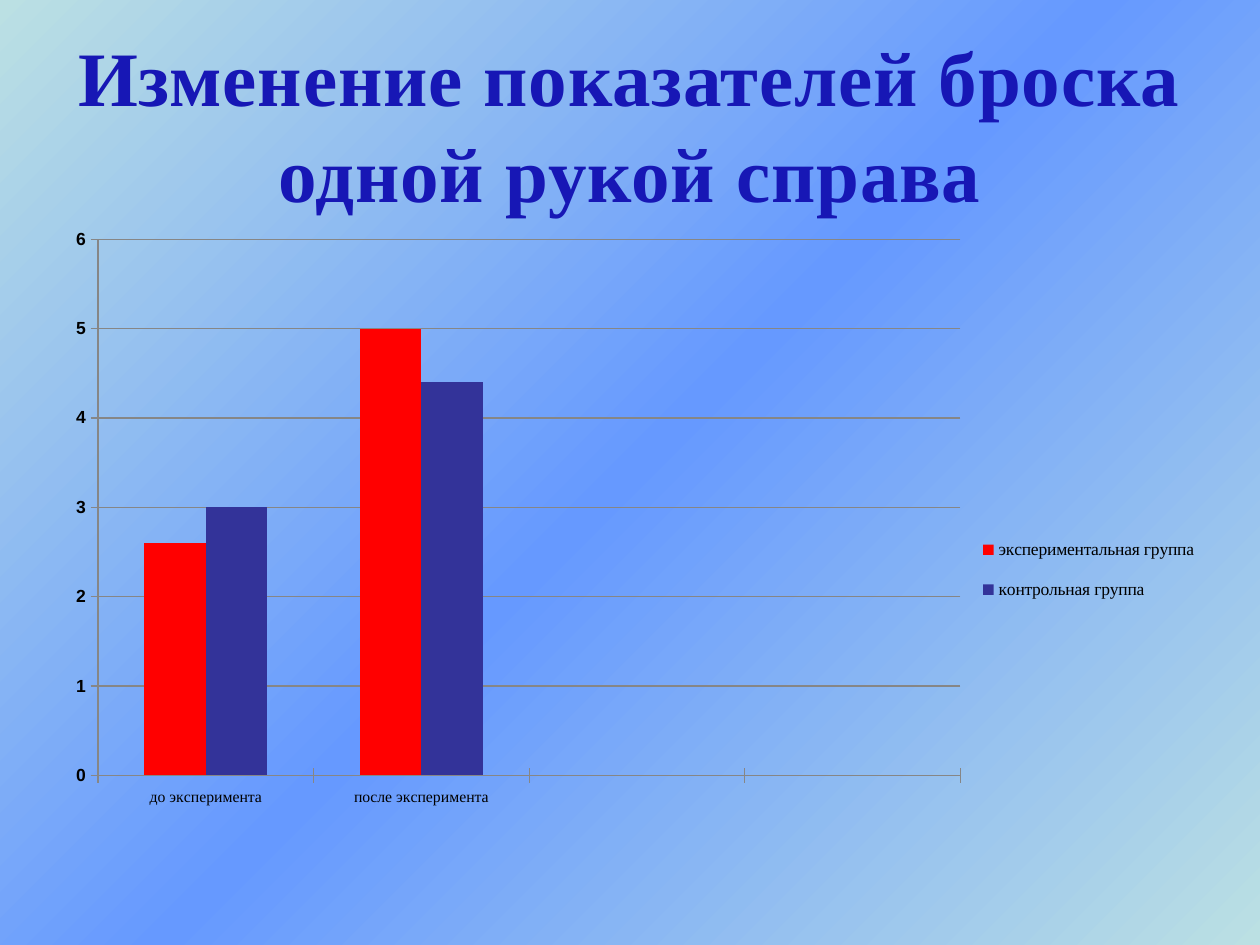
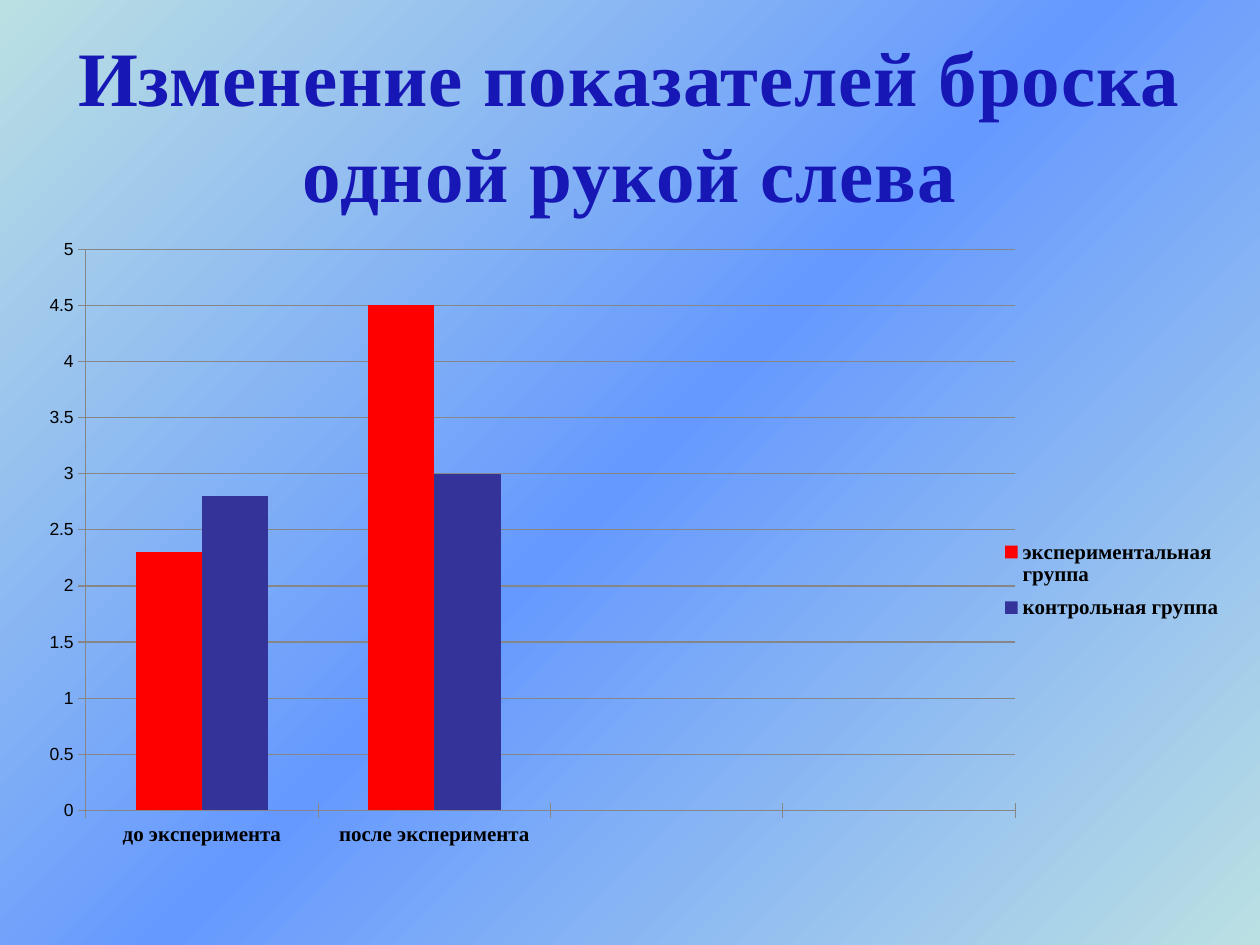
import copy

import lxml.etree
import pptx
import pptx.chart.data
import pptx.dml.color
import pptx.enum.chart
import pptx.enum.text
import pptx.oxml.ns
import pptx.util

Inches = pptx.util.Inches
Pt = pptx.util.Pt
qn = pptx.oxml.ns.qn

COLORS = {
    "pale": "BBE0E3",
    "sky": "6699FF",
    "ink": "1717B5",
    "navy": "0D0D84",
    "black": "000000",
    "grid": "868686",
    "test": "FF0000",
    "control": "333399",
}
SERIF = "Times New Roman"
GROUPS = {"test": "экспериментальная группа", "control": "контрольная группа"}
STAGES = ["до эксперимента", "после эксперимента", "", ""]

CHARTS = [
    {
        "title": "Изменение показателей броска одной рукой справа",
        "box": (0.5, 1.75, 9.25, 4.95),
        "values": {"test": (2.6, 5), "control": (3, 4.4)},
        "top": 6,
        "step": 1,
        "plot": (0.03, 0.03, 0.74, 0.86),
        "key": (0.78, 0.48, 0.2, 0.16),
        "base": {"size": Pt(10), "bold": True},
        "stage": {"size": Pt(9), "bold": False},
        "group": {"size": Pt(10), "bold": False},
    },
    {
        "title": "Изменение показателей броска одной рукой слева",
        "box": (0.25, 1.83, 9.58, 4.95),
        "values": {"test": (2.3, 4.5), "control": (2.8, 3)},
        "top": 5,
        "step": 0.5,
        "plot": (0.045, 0.03, 0.77, 0.9),
        "key": (0.8, 0.48, 0.19, 0.16),
        "base": {"size": Pt(10), "bold": False},
        "stage": {"size": Pt(12), "bold": True},
        "group": {"size": Pt(12), "bold": True},
    },
]


class Deck:
    def __init__(self):
        self.prs = pptx.Presentation()
        self.prs.slide_width = Inches(10)
        self.prs.slide_height = Inches(7.5)
        self.slide = None
        self.backdrop()

    def color(self, name):
        return pptx.dml.color.RGBColor.from_string(COLORS[name])

    def apply(self, target, values):
        for name, value in values.items():
            setattr(target, name, value)

    def place(self, shape, box):
        names = ("left", "top", "width", "height")
        self.apply(shape, dict(zip(names, map(Inches, box))))

    def ramp(self, fill, angle, stops):
        fill.gradient_angle = angle
        for stop, (spot, name) in zip(fill.gradient_stops, stops):
            stop.position = spot
            stop.color.rgb = self.color(name)

    def backdrop(self):
        master = self.prs.slide_master
        fill = master.background.fill
        fill.gradient()
        first = next(master.element.iter(qn("a:gs")))
        first.addnext(copy.deepcopy(first))
        self.ramp(fill, 315, [(0, "pale"), (0.5, "sky"), (1, "pale")])

    def add(self):
        self.slide = self.prs.slides.add_slide(self.prs.slide_layouts[5])

    def title(self, text):
        shape = self.slide.shapes.title
        self.place(shape, (0.5, 0.3, 9, 1.25))
        frame = shape.text_frame
        frame.text = text
        self.apply(frame, {
            "word_wrap": True,
            "auto_size": pptx.enum.text.MSO_AUTO_SIZE.NONE,
            "vertical_anchor": pptx.enum.text.MSO_ANCHOR.MIDDLE,
            "margin_top": Inches(0.13),
        })
        line = frame.paragraphs[0]
        self.apply(line, {
            "alignment": pptx.enum.text.PP_ALIGN.CENTER,
            "line_spacing": 1.04,
        })
        font = line.runs[0].font
        self.apply(font, {"name": SERIF, "size": Pt(44), "bold": True})
        font.fill.gradient()
        self.ramp(font.fill, 270, [(0.25, "ink"), (1, "navy")])
        next(shape.element.iter(qn("a:rPr"))).set("spc", "50")

    def layout(self, node, index, box, inner=False):
        for old in node.findall(qn("c:layout")):
            node.remove(old)
        layout = lxml.etree.Element(qn("c:layout"))
        manual = lxml.etree.SubElement(layout, qn("c:manualLayout"))
        parts = [("layoutTarget", "inner")] if inner else []
        parts += [("xMode", "edge"), ("yMode", "edge")]
        parts += zip("xywh", map(str, box))
        for tag, value in parts:
            lxml.etree.SubElement(manual, qn("c:" + tag)).set("val", value)
        node.insert(index, layout)

    def stroke(self, line):
        line.color.rgb = self.color("grid")
        line.width = Pt(0.75)

    def chart(self, item):
        data = pptx.chart.data.CategoryChartData()
        data.categories = STAGES
        for group, values in item["values"].items():
            data.add_series(GROUPS[group], (*values, None, None))
        kind = pptx.enum.chart.XL_CHART_TYPE.COLUMN_CLUSTERED
        box = map(Inches, item["box"])
        chart = self.slide.shapes.add_chart(kind, *box, data).chart
        chart.has_title = False
        self.apply(chart.font, {"name": "Arial", **item["base"]})
        chart.font.color.rgb = self.color("black")

        plot = chart.plots[0]
        self.apply(plot, {"gap_width": 150, "overlap": 0, "vary_by_categories": False})
        for series, group in zip(plot.series, item["values"]):
            series.invert_if_negative = False
            series.format.fill.solid()
            series.format.fill.fore_color.rgb = self.color(group)
        self.axes(chart, item)
        self.legend(chart, item)
        area = next(chart.element.iter(qn("c:plotArea")))
        self.layout(area, 0, item["plot"], inner=True)

    def axes(self, chart, item):
        for axis in (chart.category_axis, chart.value_axis):
            axis.major_tick_mark = pptx.enum.chart.XL_TICK_MARK.CROSS
            axis.minor_tick_mark = pptx.enum.chart.XL_TICK_MARK.NONE
            self.stroke(axis.format.line)
        self.label(chart.category_axis.tick_labels.font, item["stage"])
        self.apply(chart.value_axis, {
            "minimum_scale": 0,
            "maximum_scale": item["top"],
            "major_unit": item["step"],
            "has_major_gridlines": True,
        })
        self.stroke(chart.value_axis.major_gridlines.format.line)

    def label(self, font, values):
        self.apply(font, {"name": SERIF, **values})
        font.color.rgb = self.color("black")

    def legend(self, chart, item):
        chart.has_legend = True
        self.apply(chart.legend, {
            "position": pptx.enum.chart.XL_LEGEND_POSITION.RIGHT,
            "include_in_layout": False,
        })
        self.label(chart.legend.font, item["group"])
        node = next(chart.element.iter(qn("c:legend")))
        self.layout(node, 1, item["key"])


def main():
    deck = Deck()
    for item in CHARTS:
        deck.add()
        deck.title(item["title"])
        deck.chart(item)
    deck.prs.save("out.pptx")


if __name__ == "__main__":
    main()
